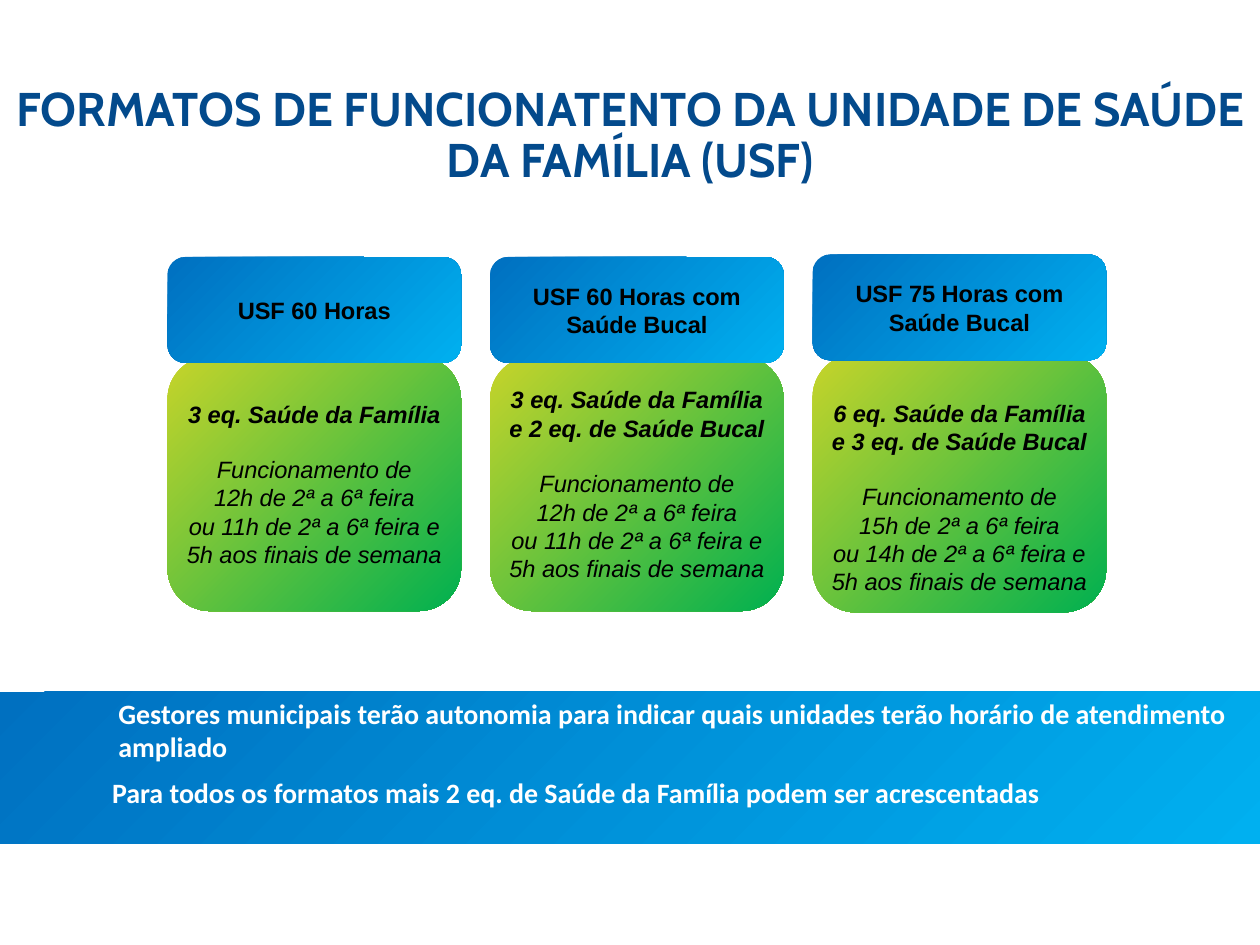
from pptx import Presentation
from pptx.dml.color import RGBColor
from pptx.enum.shapes import MSO_SHAPE
from pptx.enum.text import MSO_ANCHOR, PP_ALIGN
from pptx.util import Inches, Pt

RECT, ROUND = MSO_SHAPE.RECTANGLE, MSO_SHAPE.ROUNDED_RECTANGLE
LEFT, MID = PP_ALIGN.LEFT, PP_ALIGN.CENTER
BLUE = ("0070C0", "00B0F0")
GREEN = ("C7D42A", "00B050")
W, H = 10, 7.5


def panel(kind, x, y, w, h, hues):
    shape = slide.shapes.add_shape(kind, Inches(x), Inches(y), Inches(w), Inches(h))
    shape.shadow.inherit = False
    shape.line.fill.background()
    shape.fill.gradient()
    shape.fill.gradient_angle = 315
    for stop, hue in zip(shape.fill.gradient_stops, hues):
        stop.color.rgb = RGBColor.from_string(hue)
    return shape


def write(shape, lines, face, size, hue, align=MID, anchor=MSO_ANCHOR.MIDDLE):
    frame = shape.text_frame
    frame.word_wrap = True
    frame.vertical_anchor = anchor
    frame.margin_left = frame.margin_right = Inches(0.04)
    frame.margin_top = frame.margin_bottom = Inches(0.04)
    frame.text = "\n".join(lines)
    for para in frame.paragraphs:
        para.alignment = align
        for run in para.runs:
            run.font.name = face
            run.font.size = Pt(size)
            run.font.bold = True
            run.font.color.rgb = RGBColor.from_string(hue)
    return frame


deck = Presentation()
deck.slide_width, deck.slide_height = Inches(W), Inches(H)
slide = deck.slides.add_slide(deck.slide_layouts[6])

band = panel(RECT, 0, 0.732 * H, W, 0.161 * H, BLUE)
notes = [
    "Gestores municipais terão autonomia para indicar quais unidades terão horário de atendimento ampliado",
    "Para todos os formatos mais 2 eq. de Saúde da Família podem ser acrescentadas",
]
frame = write(band, notes, "Calibri", 16, "FFFFFF", LEFT)
frame.margin_bottom = Inches(0.28)
for para, indent in zip(frame.paragraphs, (0.9, 0.85)):
    para._p.get_or_add_pPr().set("marL", str(Inches(indent)))
frame.paragraphs[1].space_before = Pt(7)

title = slide.shapes.add_textbox(0, Inches(0.085 * H), Inches(W), Inches(0.119 * H))
head = ["FORMATOS DE FUNCIONATENTO DA UNIDADE DE SAÚDE DA FAMÍLIA (USF)"]
frame = write(title, head, "Cabin", 27, "034A8C", MID, MSO_ANCHOR.BOTTOM)
frame.paragraphs[0].line_spacing = 0.9

cards = [
    ("USF 60 Horas", "3 eq. Saúde da Família", 12, 11, 2.04, 2.83, 2.02, 0.04),
    ("USF 60 Horas com Saúde Bucal", "3 eq. Saúde da Família e 2 eq. de Saúde Bucal", 12, 11, 2.04, 2.83, 2.02, 0.04),
    ("USF 75 Horas com Saúde Bucal", "6 eq. Saúde da Família e 3 eq. de Saúde Bucal", 15, 14, 2.02, 2.81, 2.05, 0.26),
]
for col, (name, teams, long, short, top, low, tall, inset) in enumerate(cards):
    x = 0.133 * W + col * 0.256 * W
    body = panel(ROUND, x, low, 0.233 * W, tall, GREEN)
    lines = [
        teams,
        "Funcionamento de",
        f"{long}h de 2ª a 6ª feira",
        f"ou {short}h de 2ª a 6ª feira e 5h aos finais de semana",
    ]
    frame = write(body, lines, "Arial", 13.5, "000000")
    frame.margin_top = Inches(inset)
    frame.paragraphs[1].space_before = Pt(15.5)
    for row, para in enumerate(frame.paragraphs):
        para.runs[0].font.italic = True
        para.runs[0].font.bold = row == 0
    cap = panel(ROUND, x, top, 0.233 * W, 0.112 * H, BLUE)
    write(cap, [name], "Arial", 13.5, "000000")

deck.save("out.pptx")
